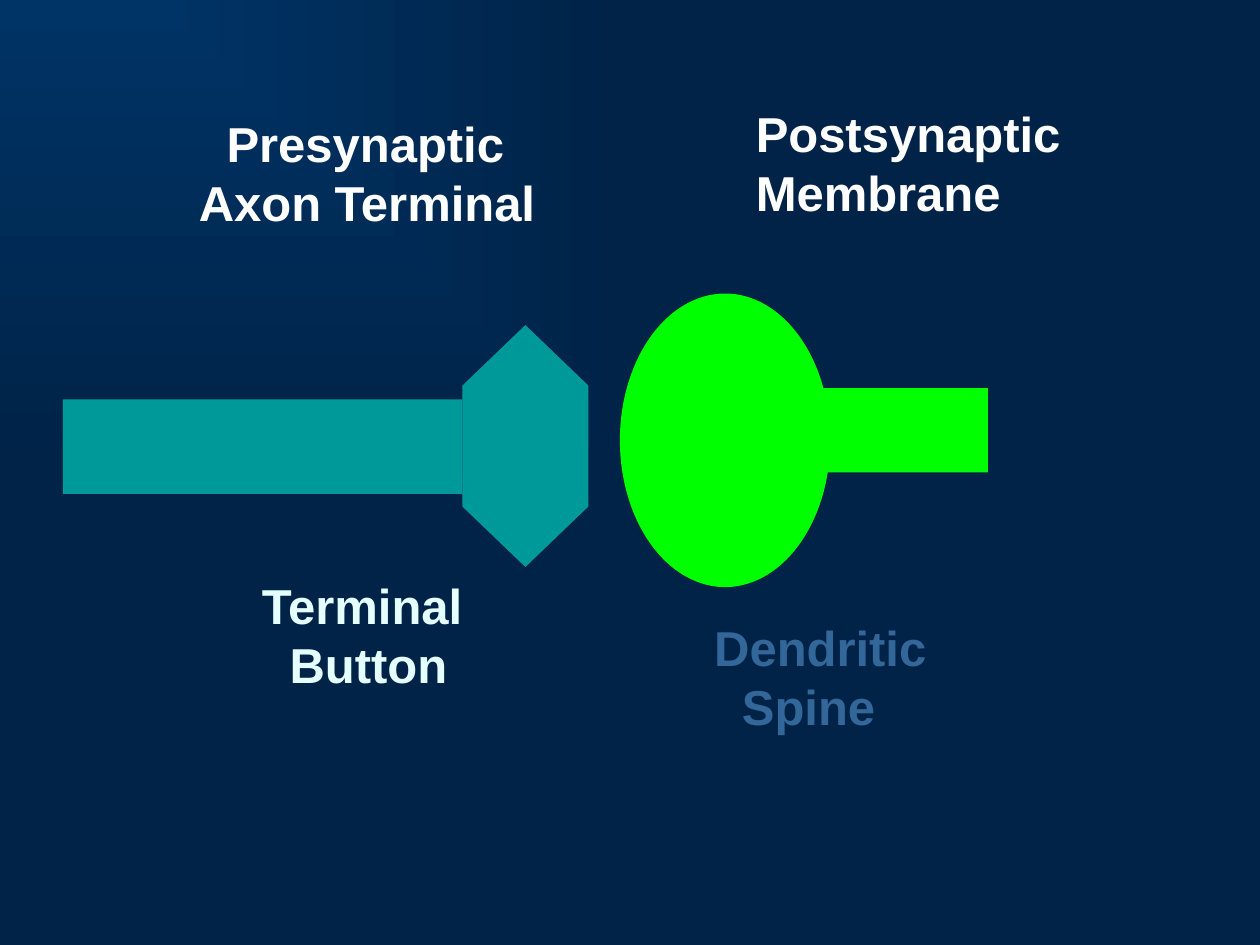
from dataclasses import dataclass

from lxml.etree import SubElement
from pptx import Presentation
from pptx.dml.color import RGBColor as RGB
from pptx.enum.shapes import MSO_SHAPE as Preset
from pptx.enum.text import MSO_AUTO_SIZE as AutoSize
from pptx.oxml.ns import qn
from pptx.util import Inches, Pt


@dataclass(frozen=True)
class Theme:
    font: str = "Arial"
    label_size: int = 28
    glow: RGB = RGB(0x00, 0x33, 0x66)
    backdrop: RGB = RGB(0x00, 0x23, 0x47)
    axon: RGB = RGB(0x00, 0x99, 0x99)
    spine: RGB = RGB(0x00, 0xFF, 0x00)
    heading: RGB = RGB(0xFF, 0xFF, 0xFF)
    button_label: RGB = RGB(0xE5, 0xFF, 0xFF)
    spine_label: RGB = RGB(0x33, 0x66, 0x99)


THEME = Theme()


@dataclass(frozen=True)
class Box:
    left: float
    top: float
    width: float
    height: float

    def lengths(self) -> list:
        return [Inches(n) for n in (self.left, self.top, self.width, self.height)]


@dataclass(frozen=True)
class Label:
    text: str
    box: Box
    color: RGB
    indents: tuple = (0, 0)


@dataclass(frozen=True)
class Part:
    preset: Preset
    box: Box
    color: RGB


INDENT = 0.22
LABELS = [
    Label("Presynaptic\nAxon Terminal", Box(1.48, 0.85, 2.9, 1.03), THEME.heading, (INDENT, 0)),
    Label("Postsynaptic\nMembrane", Box(5.9, 0.77, 2.62, 1.03), THEME.heading),
    Label("Terminal\nButton", Box(1.98, 4.52, 1.82, 1.03), THEME.button_label, (0, INDENT)),
    Label("Dendritic\nSpine", Box(5.57, 4.85, 1.89, 1.03), THEME.spine_label, (0, INDENT)),
]
AXON = Part(Preset.RECTANGLE, Box(0.5, 3.17, 3.17, 0.75), THEME.axon)
TERMINAL_BUTTON = Part(Preset.HEXAGON, Box(3.21, 3.04, 1.92, 1), THEME.axon)
DENDRITIC_SPINE = [
    Part(Preset.OVAL, Box(4.92, 2.33, 1.67, 2.33), THEME.spine),
    Part(Preset.RECTANGLE, Box(6.42, 3.08, 1.42, 0.67), THEME.spine),
]


def paint_background(slide) -> None:
    """Fill with a rectangular gradient that glows from the top left corner."""
    fill = slide.background.fill
    fill.gradient()
    for stop, color in zip(fill.gradient_stops, (THEME.glow, THEME.backdrop)):
        stop.color.rgb = color
    gradient = slide.background._cSld.find(".//" + qn("a:gradFill"))
    gradient.remove(gradient.find(qn("a:lin")))
    rect_path = SubElement(gradient, qn("a:path"), path="rect")
    SubElement(rect_path, qn("a:fillToRect"), r="100000", b="100000")


def draw_part(shapes, part: Part):
    shape = shapes.add_shape(part.preset, *part.box.lengths())
    shape.shadow.inherit = False
    shape.fill.solid()
    shape.fill.fore_color.rgb = part.color
    shape.line.fill.background()
    return shape


def draw_label(shapes, label: Label) -> None:
    frame = shapes.add_textbox(*label.box.lengths()).text_frame
    frame.text = label.text
    frame.word_wrap = False
    frame.auto_size = AutoSize.SHAPE_TO_FIT_TEXT
    for paragraph, indent in zip(frame.paragraphs, label.indents):
        if indent:
            paragraph._p.get_or_add_pPr().set("marL", str(Inches(indent)))
        for run in paragraph.runs:
            run.font.name = THEME.font
            run.font.size = Pt(THEME.label_size)
            run.font.bold = True
            run.font.color.rgb = label.color


def main() -> None:
    deck = Presentation()
    deck.slide_width, deck.slide_height = Inches(10), Inches(7.5)
    slide = deck.slides.add_slide(deck.slide_layouts[6])
    paint_background(slide)

    draw_part(slide.shapes, AXON)
    button = draw_part(slide.shapes, TERMINAL_BUTTON)
    button.adjustments[0] = 0.48
    button.rotation = 270
    spine = slide.shapes.add_group_shape()
    for part in DENDRITIC_SPINE:
        draw_part(spine.shapes, part)
    for label in LABELS:
        draw_label(slide.shapes, label)

    deck.save("out.pptx")


if __name__ == "__main__":
    main()
